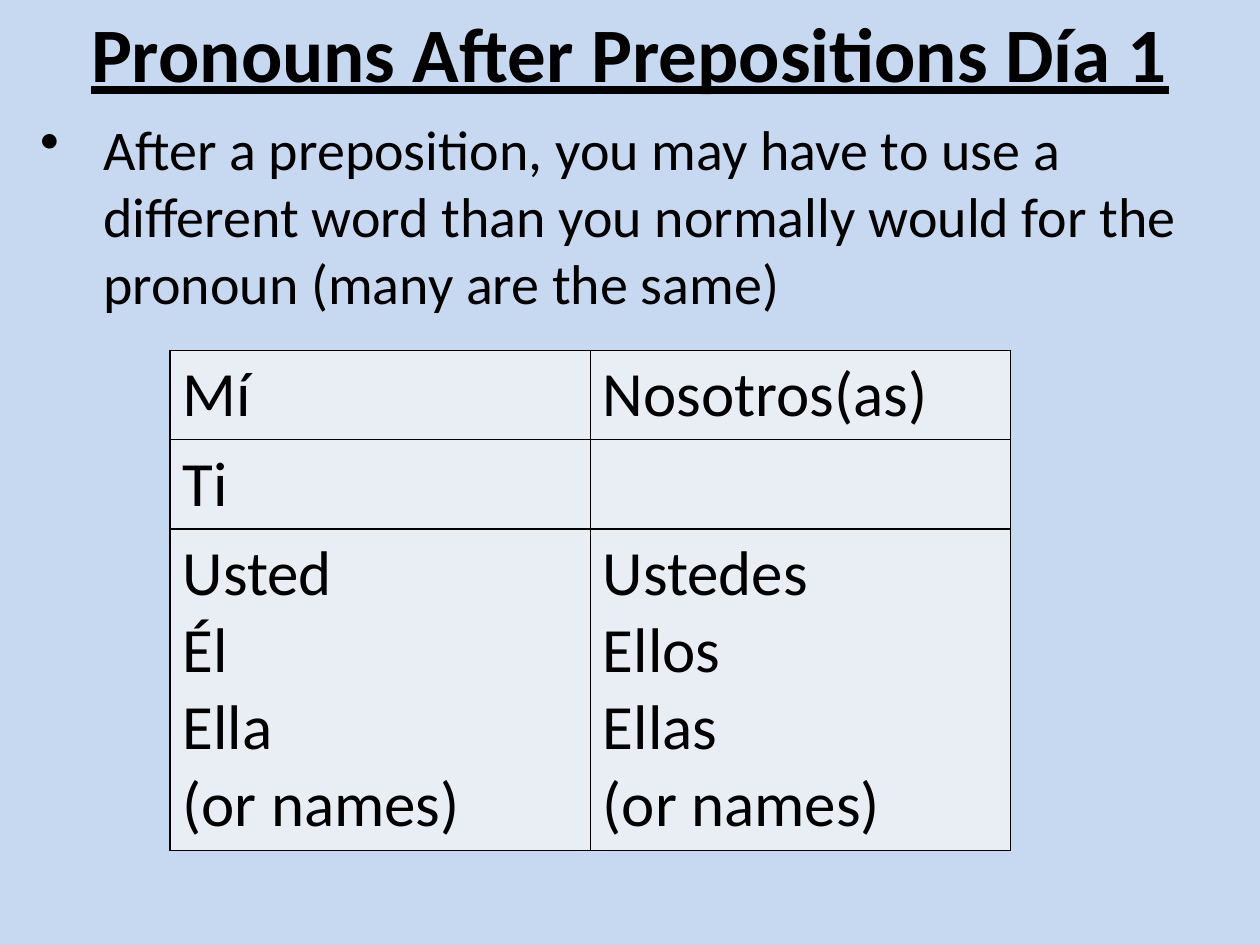
import pptx
import pptx.util
import pptx.dml.color
import pptx.enum.text
import pptx.oxml
import pptx.oxml.ns
from lxml import etree

Inches, Pt = pptx.util.Inches, pptx.util.Pt
qn = pptx.oxml.ns.qn
COLORS = {"back": "C6D9F1", "cell": "E9EDF4", "ink": "000000"}
FONT = "Calibri"
ROWS = [
    ("Mí", "Nosotros(as)"),
    ("Ti", ""),
    ("Usted\nÉl\nElla\n(or names)", "Ustedes\nEllos\nEllas\n(or names)"),
]
HEIGHTS = [0.71, 0.71, 2.55]


def paint(fill, name):
    fill.solid()
    fill.fore_color.rgb = pptx.dml.color.RGBColor.from_string(COLORS[name])


def write(frame, text, size):
    frame.text = text
    for par in frame.paragraphs:
        par.font.name = FONT
        par.font.size = Pt(size)
        paint(par.font.fill, "ink")
    return frame.paragraphs[0]


def add_text(slide, box, text, size):
    frame = slide.shapes.add_textbox(*map(Inches, box)).text_frame
    frame.word_wrap = True
    return frame, write(frame, text, size)


def add_title(slide, box):
    frame, par = add_text(slide, box, "Pronouns After Prepositions Día 1", 44)
    frame.vertical_anchor = pptx.enum.text.MSO_ANCHOR.MIDDLE
    par.alignment = pptx.enum.text.PP_ALIGN.CENTER
    par.font.bold = par.font.underline = True


def add_rule(slide, box):
    text = ("After a preposition, you may have to use a different word than "
            "you normally would for the pronoun (many are the same)")
    par = add_text(slide, box, text, 32)[1]
    # Hanging bullet
    props = par._p.get_or_add_pPr()
    props.set("marL", str(Inches(0.5)))
    props.set("indent", str(Inches(-0.5)))
    bullet = pptx.oxml.parse_xml(
        f'<a:buChar {pptx.oxml.ns.nsdecls("a")} char="•"/>')
    props.insert_element_before(bullet, "a:tabLst", "a:defRPr", "a:extLst")


def add_borders(cell):
    props = cell._tc.get_or_add_tcPr()
    for spot, side in enumerate(("lnL", "lnR", "lnT", "lnB")):
        line = etree.Element(qn(f"a:{side}"), w=str(Pt(1)))
        fill = etree.SubElement(line, qn("a:solidFill"))
        etree.SubElement(fill, qn("a:srgbClr"), val=COLORS["ink"])
        props.insert(spot, line)


def add_pronouns(slide, box):
    grid = slide.shapes.add_table(
        len(ROWS), len(ROWS[0]), *map(Inches, box)).table
    for row, height, words in zip(grid.rows, HEIGHTS, ROWS):
        row.height = Inches(height)
        for cell, text in zip(row.cells, words):
            write(cell.text_frame, text, 36)
            paint(cell.fill, "cell")
            add_borders(cell)


def main():
    deck = pptx.Presentation()
    deck.slide_width, deck.slide_height = Inches(10), Inches(7.5)
    slide = deck.slides.add_slide(deck.slide_layouts[6])
    paint(slide.background.fill, "back")
    add_title(slide, (0, -0.04, 10, 0.9))
    add_rule(slide, (0.22, 0.86, 9.78, 1.91))
    add_pronouns(slide, (1.35, 2.78, 6.67, sum(HEIGHTS)))
    deck.save("out.pptx")


if __name__ == "__main__":
    main()
